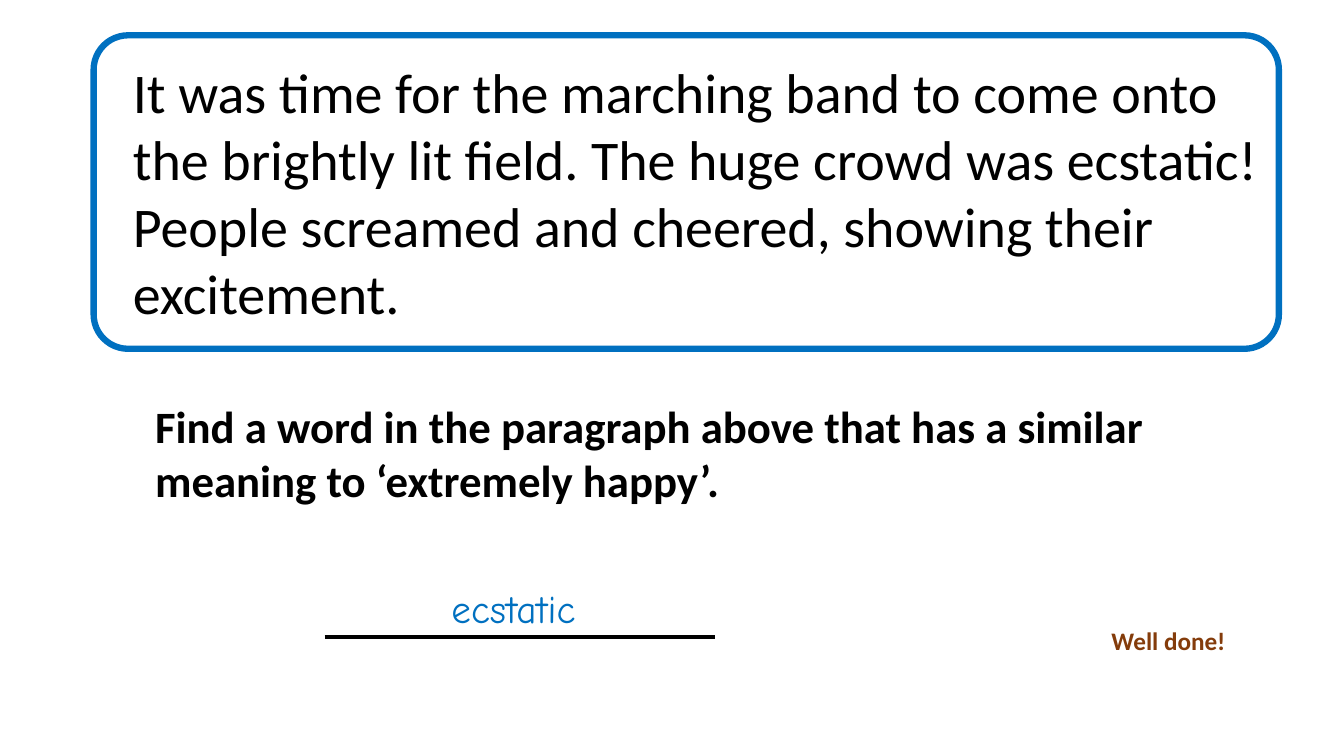
"""Build a vocabulary slide with a reading passage, a question and its answer."""
from lxml.etree import SubElement
from pptx import Presentation
from pptx.dml.color import RGBColor
from pptx.enum.shapes import MSO_CONNECTOR as Connector, MSO_SHAPE as Shape
from pptx.enum.text import PP_ALIGN as Align
from pptx.oxml.ns import qn
from pptx.util import Cm, Pt

BLACK = RGBColor(0x00, 0x00, 0x00)
BLUE = RGBColor(0x00, 0x70, 0xC0)
BROWN = RGBColor(0x84, 0x3C, 0x0B)

PASSAGE = (
    "It was time for the marching band to come onto the brightly lit field. "
    "The huge crowd was ecstatic! People screamed and cheered, showing their excitement."
)
QUESTION = (
    "Find a word in the paragraph above that has a similar "
    "meaning to ‘extremely happy’."
)

presentation = Presentation()
presentation.slide_width = Cm(33.87)
presentation.slide_height = Cm(19.05)
slide = presentation.slides.add_slide(presentation.slide_layouts[6])


def add_text(text, left, top, width, height, size, color,
             font_name="Calibri", bold=False, align=Align.LEFT, space_after=0):
    box = slide.shapes.add_textbox(Cm(left), Cm(top), Cm(width), Cm(height))
    box.text_frame.word_wrap = True
    paragraph = box.text_frame.paragraphs[0]
    paragraph.text = text
    paragraph.alignment = align
    paragraph.space_after = Pt(space_after)
    paragraph.font.name = font_name
    paragraph.font.size = Pt(size)
    paragraph.font.bold = bold
    paragraph.font.color.rgb = color


add_text(QUESTION, 3.66, 9.93, 27.13, 3, 32, BLACK, bold=True, space_after=6)

answer_line = slide.shapes.add_connector(
    Connector.STRAIGHT, Cm(8.18), Cm(16.05), Cm(18.01), Cm(16.05))
answer_line.line.color.rgb = BLACK
answer_line.line.width = Pt(3)
SubElement(answer_line._element.spPr, qn("a:effectLst"))

add_text("ecstatic", 10.69, 14.61, 4.5, 1.45, 28, BLUE,
         font_name="Comic Neue", align=Align.CENTER)
add_text("Well done!", 27.76, 15.62, 4.34, 1.02, 18, BROWN, bold=True)
add_text(PASSAGE, 3.1, 1.32, 29.13, 7.09, 40, BLACK, space_after=6)

passage_frame = slide.shapes.add_shape(
    Shape.ROUNDED_RECTANGLE, Cm(2.36), Cm(0.89), Cm(29.87), Cm(7.9))
passage_frame.adjustments[0] = 0.11
passage_frame.shadow.inherit = False
passage_frame.fill.background()
passage_frame.line.color.rgb = BLUE
passage_frame.line.width = Pt(4.5)

presentation.save("out.pptx")
